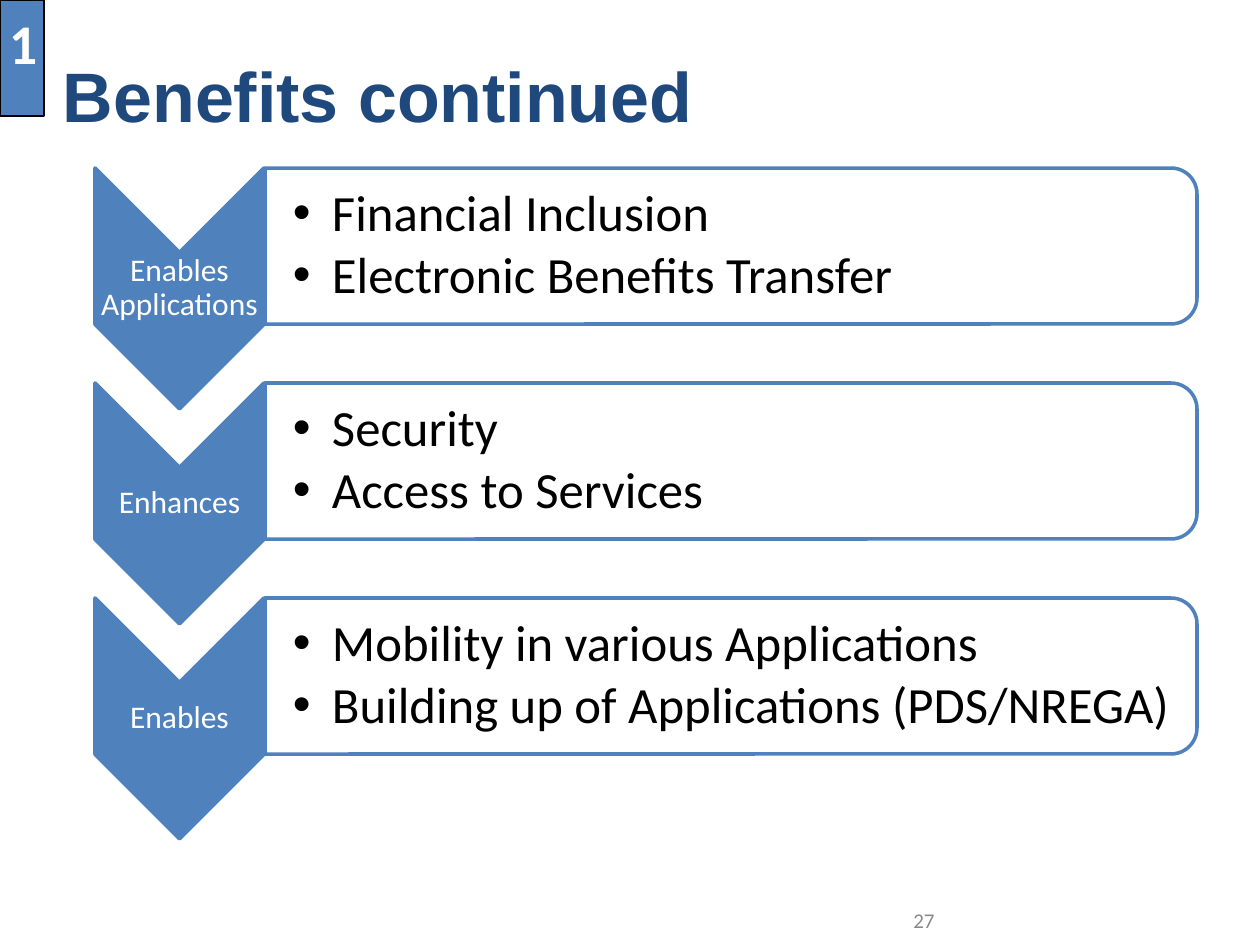
from dataclasses import dataclass

from lxml.etree import SubElement
from pptx import Presentation
from pptx.dml.color import RGBColor
from pptx.enum.shapes import MSO_SHAPE as Shape
from pptx.enum.text import MSO_ANCHOR as Anchor, MSO_AUTO_SIZE as AutoSize, PP_ALIGN as Align
from pptx.oxml.ns import qn
from pptx.util import Pt

EMU_PER_PX = 914400 / 126


@dataclass(frozen=True)
class Theme:
    blue: str = "4F81BD"
    navy: str = "1F497D"
    white: str = "FFFFFF"
    black: str = "000000"
    grey: str = "898989"
    body_font: str = "Calibri"
    title_font: str = "Arial"
    title_size: int = 40
    badge_size: int = 32
    bullet_size: int = 29
    label_size: int = 18
    number_size: int = 12


THEME = Theme()

BENEFITS = [
    ("Enables Applications", ["Financial Inclusion", "Electronic Benefits Transfer"]),
    ("Enhances", ["Security", "Access to Services"]),
    ("Enables", ["Mobility in various Applications",
                 "Building up of Applications (PDS/NREGA)"]),
]

# Row geometry in px
FIRST_TOP, ROW_PITCH = 168, 215
CHEVRON_LEFT, CHEVRON_WIDTH, CHEVRON_HEIGHT = 95, 169, 241
PANEL_LEFT, PANEL_WIDTH, PANEL_HEIGHT = 265, 932, 156
PANEL_PAD = 8


def px(length):
    return round(length * EMU_PER_PX)


def add_outlined(slide, kind, box, fill, line, line_width, quarter_turn=False):
    """Draw a preset shape that covers box, turned clockwise if asked."""
    left, top, width, height = box
    if quarter_turn:
        left, top = left + (width - height) / 2, top + (height - width) / 2
        width, height = height, width
    shape = slide.shapes.add_shape(kind, px(left), px(top), px(width), px(height))
    shape.rotation = 90 if quarter_turn else 0
    shape.shadow.inherit = False
    shape.fill.solid()
    shape.fill.fore_color.rgb = RGBColor.from_string(fill)
    shape.line.color.rgb = RGBColor.from_string(line)
    shape.line.width = Pt(line_width)
    return shape


def add_text(slide, box, lines, size, color, font=THEME.body_font, bold=False,
             align=Align.LEFT, anchor=Anchor.TOP, insets=(0, 0, 0, 0),
             line_spacing=None, before=None, after=None):
    text_box = slide.shapes.add_textbox(*map(px, box))
    frame = text_box.text_frame
    frame.word_wrap = True
    frame.auto_size = AutoSize.NONE
    frame.vertical_anchor = anchor
    (frame.margin_left, frame.margin_top,
     frame.margin_right, frame.margin_bottom) = map(px, insets)
    frame.text = "\n".join(lines)
    for paragraph in frame.paragraphs:
        paragraph.alignment = align
        paragraph.line_spacing = line_spacing
        paragraph.space_before = None if before is None else Pt(before)
        paragraph.space_after = None if after is None else Pt(after)
        for run in paragraph.runs:
            run.font.name = font
            run.font.size = Pt(size)
            run.font.bold = bold
            run.font.color.rgb = RGBColor.from_string(color)
    return frame


def add_bullets(frame, indent):
    for paragraph in frame.paragraphs:
        props = paragraph._p.get_or_add_pPr()
        props.set("marL", str(px(indent)))
        props.set("indent", str(-px(indent)))
        SubElement(props, qn("a:buFont")).set("typeface", "Arial")
        SubElement(props, qn("a:buChar")).set("char", "•")


def add_benefit(slide, top, label, points):
    # Chevron with its label between the notch and the tip
    add_outlined(slide, Shape.CHEVRON,
                 (CHEVRON_LEFT, top, CHEVRON_WIDTH, CHEVRON_HEIGHT),
                 THEME.blue, THEME.blue, 2, quarter_turn=True)
    label_box = (CHEVRON_LEFT, top + CHEVRON_WIDTH / 2,
                 CHEVRON_WIDTH, CHEVRON_HEIGHT - CHEVRON_WIDTH)
    add_text(slide, label_box, [label], THEME.label_size, THEME.white,
             align=Align.CENTER, anchor=Anchor.MIDDLE, insets=(1, 1, 1, 1),
             line_spacing=0.9, after=6.3)

    # Panel with its points
    add_outlined(slide, Shape.ROUND_2_SAME_RECTANGLE,
                 (PANEL_LEFT, top, PANEL_WIDTH, PANEL_HEIGHT),
                 THEME.white, THEME.blue, 2, quarter_turn=True)
    points_box = (PANEL_LEFT, top + PANEL_PAD,
                  PANEL_WIDTH - PANEL_PAD, PANEL_HEIGHT - 2 * PANEL_PAD)
    frame = add_text(slide, points_box, points, THEME.bullet_size, THEME.black,
                     anchor=Anchor.MIDDLE, insets=(28, 2, 2, 2),
                     line_spacing=0.9, after=4.35)
    add_bullets(frame, 39)


def add_badge(slide, number):
    box = (0, 0, 44, 116)
    add_outlined(slide, Shape.RECTANGLE, box, THEME.blue, THEME.black, 0.75)
    add_text(slide, box, [number], THEME.badge_size, THEME.white, bold=True,
             align=Align.CENTER, insets=(9, 9, 9, 9), before=6.4)


def main():
    deck = Presentation()
    deck.slide_width, deck.slide_height = px(1260), px(945)
    slide = deck.slides.add_slide(deck.slide_layouts[6])

    # Benefit rows
    for row, (label, points) in enumerate(BENEFITS):
        add_benefit(slide, FIRST_TOP + row * ROW_PITCH, label, points)

    # Badge, title and slide number
    add_badge(slide, "1")
    add_text(slide, (63, 53, 1134, 85), ["Benefits continued"], THEME.title_size,
             THEME.navy, font=THEME.title_font, bold=True)
    add_text(slide, (777, 895, 294, 50), ["27"], THEME.number_size, THEME.grey,
             align=Align.CENTER, anchor=Anchor.MIDDLE, insets=(13, 6, 13, 6))

    deck.save("out.pptx")


if __name__ == "__main__":
    main()
